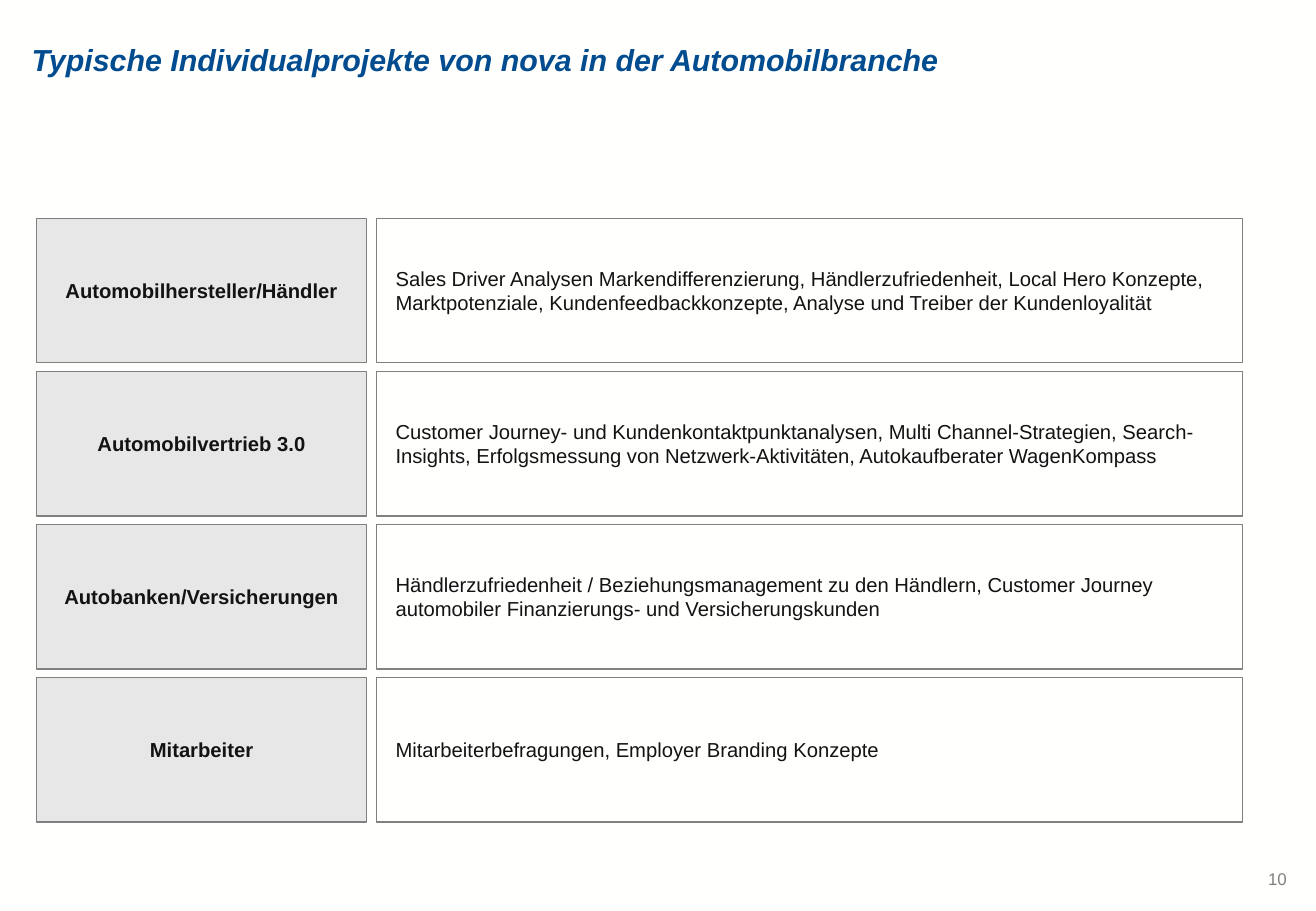
from pptx import Presentation
from pptx.dml.color import RGBColor
from pptx.enum.shapes import MSO_SHAPE
from pptx.enum.text import MSO_ANCHOR, PP_ALIGN
from pptx.util import Cm, Pt

COLORS = {
    "background": "FFFFFE",
    "title": "004C8F",
    "label": "E8E7E7",
    "border": "808080",
    "text": "141313",
    "number": "7F7F7F",
}

PROJECTS = [
    ("Automobilhersteller/Händler",
     "Sales Driver Analysen Markendifferenzierung, Händlerzufriedenheit, "
     "Local Hero Konzepte, Marktpotenziale, Kundenfeedbackkonzepte, "
     "Analyse und Treiber der Kundenloyalität"),
    ("Automobilvertrieb 3.0",
     "Customer Journey- und Kundenkontaktpunktanalysen, "
     "Multi Channel-Strategien, Search-Insights, Erfolgsmessung von "
     "Netzwerk-Aktivitäten, Autokaufberater WagenKompass"),
    ("Autobanken/Versicherungen",
     "Händlerzufriedenheit / Beziehungsmanagement zu den Händlern, "
     "Customer Journey automobiler Finanzierungs- und Versicherungskunden"),
    ("Mitarbeiter",
     "Mitarbeiterbefragungen, Employer Branding Konzepte"),
]

TOP, PITCH, HEIGHT = 4.57, 3.2, 3.02
LABEL_LEFT, LABEL_WIDTH = 0.76, 6.91
DETAIL_LEFT, DETAIL_WIDTH = 7.87, 18.11


def color(name):
    return RGBColor.from_string(COLORS[name])


def write(frame, text, size=12, ink="text", bold=False, italic=False,
          align=PP_ALIGN.LEFT, anchor=MSO_ANCHOR.MIDDLE,
          margins=(0.1, 0.1, 0.1, 0.1)):
    frame.word_wrap = True
    frame.vertical_anchor = anchor
    (frame.margin_left, frame.margin_top,
     frame.margin_right, frame.margin_bottom) = map(Cm, margins)
    paragraph = frame.paragraphs[0]
    paragraph.alignment = align
    run = paragraph.add_run()
    run.text = text
    run.font.name = "Arial"
    run.font.size = Pt(size)
    run.font.bold = bold
    run.font.italic = italic
    run.font.color.rgb = color(ink)


class ProjectSlide:
    def __init__(self, deck):
        self.slide = deck.slides.add_slide(deck.slide_layouts[5])
        background = self.slide.background.fill
        background.solid()
        background.fore_color.rgb = color("background")

    def title(self, text):
        heading = self.slide.shapes.title
        heading.left, heading.top = Cm(0.66), Cm(0.46)
        heading.width, heading.height = Cm(20.04), Cm(1.55)
        write(heading.text_frame, text, size=18, ink="title", bold=True,
              italic=True, margins=(0, 0.13, 0.25, 0.13))

    def box(self, text, left, top, width, fill, **text_format):
        panel = self.slide.shapes.add_shape(
            MSO_SHAPE.RECTANGLE, Cm(left), Cm(top), Cm(width), Cm(HEIGHT))
        panel.shadow.inherit = False
        panel.fill.solid()
        panel.fill.fore_color.rgb = color(fill)
        panel.line.color.rgb = color("border")
        panel.line.width = Pt(0.75)
        write(panel.text_frame, text, **text_format)

    def page_number(self, text):
        number = self.slide.shapes.add_textbox(
            Cm(21.89), Cm(18.03), Cm(5.26), Cm(0.69))
        write(number.text_frame, text, size=10, ink="number",
              align=PP_ALIGN.RIGHT, anchor=MSO_ANCHOR.TOP,
              margins=(0.25, 0.13, 0.25, 0.13))


def main():
    deck = Presentation()
    deck.slide_width, deck.slide_height = Cm(27.51), Cm(19.05)
    page = ProjectSlide(deck)
    page.title("Typische Individualprojekte von nova in der Automobilbranche")
    for row, (client, services) in enumerate(PROJECTS):
        top = TOP + row * PITCH
        page.box(client, LABEL_LEFT, top, LABEL_WIDTH, "label",
                 bold=True, align=PP_ALIGN.CENTER)
        page.box(services, DETAIL_LEFT, top, DETAIL_WIDTH, "background",
                 margins=(0.4, 0.1, 0.4, 0.1))
    page.page_number("10")
    deck.save("out.pptx")


if __name__ == "__main__":
    main()
